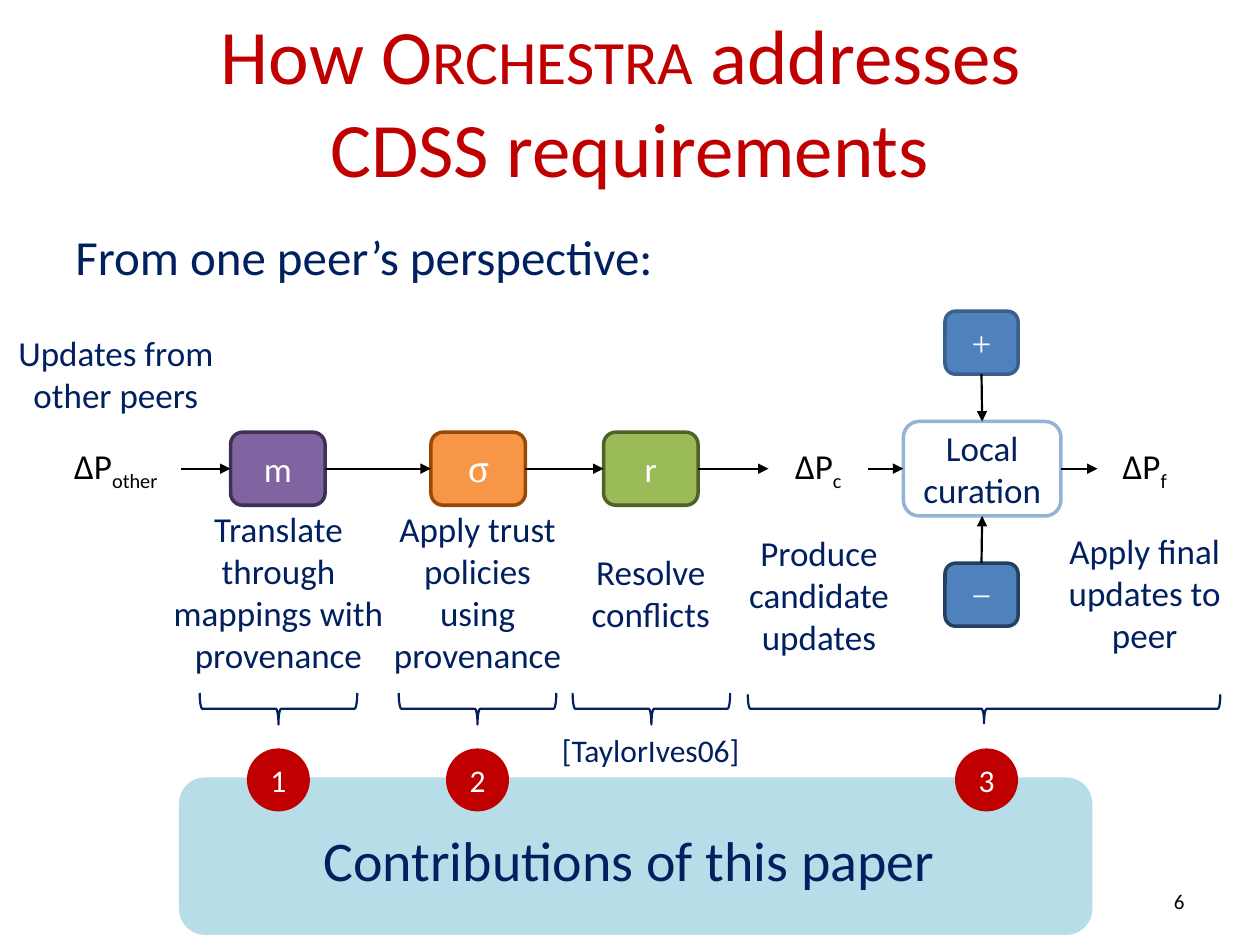
from lxml import etree
from pptx import Presentation
from pptx.dml.color import RGBColor
from pptx.enum.shapes import MSO_CONNECTOR, MSO_SHAPE
from pptx.enum.text import MSO_ANCHOR, PP_ALIGN
from pptx.oxml.ns import qn
from pptx.util import Inches, Pt

ROUNDED, OVAL, BRACE = MSO_SHAPE.ROUNDED_RECTANGLE, MSO_SHAPE.OVAL, MSO_SHAPE.LEFT_BRACE
STRAIGHT = MSO_CONNECTOR.STRAIGHT
TOP, MIDDLE = MSO_ANCHOR.TOP, MSO_ANCHOR.MIDDLE
LEFT, CENTER, RIGHT = PP_ALIGN.LEFT, PP_ALIGN.CENTER, PP_ALIGN.RIGHT
TOP_SIDE, LEFT_SIDE, BOTTOM_SIDE, RIGHT_SIDE = range(4)

BLACK = RGBColor(0x00, 0x00, 0x00)
WHITE = RGBColor(0xFF, 0xFF, 0xFF)
NAVY = RGBColor(0x00, 0x20, 0x60)
RED = RGBColor(0xC0, 0x00, 0x00)
PALE_TEAL = RGBColor(0xB7, 0xDE, 0xE8)
PURPLE, DARK_PURPLE = RGBColor(0x80, 0x64, 0xA2), RGBColor(0x40, 0x31, 0x52)
ORANGE, DARK_ORANGE = RGBColor(0xF7, 0x96, 0x46), RGBColor(0x98, 0x48, 0x07)
GREEN, DARK_GREEN = RGBColor(0x9B, 0xBB, 0x59), RGBColor(0x4F, 0x62, 0x28)
BLUE, MID_BLUE = RGBColor(0x4F, 0x81, 0xBD), RGBColor(0x3A, 0x5F, 0x8C)
DARK_BLUE, LIGHT_BLUE = RGBColor(0x24, 0x40, 0x61), RGBColor(0x95, 0xB3, 0xD7)


def style_paragraph(paragraph, size, color, align=CENTER, font="Calibri"):
    """Set the alignment and font of a whole paragraph."""
    paragraph.alignment = align
    paragraph.font.name = font
    paragraph.font.size = Pt(size)
    paragraph.font.color.rgb = color


def add_text(slide, box, lines, size, color=NAVY, align=CENTER, anchor=TOP):
    """Add a wrapped text box with one paragraph per line."""
    frame = slide.shapes.add_textbox(*map(Inches, box)).text_frame
    frame.word_wrap = True
    frame.vertical_anchor = anchor
    frame.text = lines
    for paragraph in frame.paragraphs:
        style_paragraph(paragraph, size, color, align)
    return frame


def add_figure(slide, kind, box, fill=None, line=None, width=2):
    """Add a flat shape with an optional fill and outline."""
    figure = slide.shapes.add_shape(kind, *map(Inches, box))
    figure.shadow.inherit = False
    if fill is None:
        figure.fill.background()
    else:
        figure.fill.solid()
        figure.fill.fore_color.rgb = fill
    if line is None:
        figure.line.fill.background()
    else:
        figure.line.color.rgb = line
        figure.line.width = Pt(width)
    return figure


def add_node(slide, kind, box, label, fill=None, line=None, color=WHITE,
             size=20, font="Calibri", subscript=""):
    """Add a shape with a centred label and an optional subscript."""
    node = add_figure(slide, kind, box, fill, line)
    node.text_frame.vertical_anchor = MIDDLE
    paragraph = node.text_frame.paragraphs[0]
    paragraph.add_run().text = label
    if subscript:
        run = paragraph.add_run()
        run.text = subscript
        run.font._element.set("baseline", "-25000")
    style_paragraph(paragraph, size, color, font=font)
    return node


def add_arrow(slide, start, start_side, end, end_side):
    """Join two nodes with a black arrow."""
    arrow = slide.shapes.add_connector(STRAIGHT, 0, 0, 0, 0)
    arrow.begin_connect(start, start_side)
    arrow.end_connect(end, end_side)
    arrow.line.color.rgb = BLACK
    arrow.line.width = Pt(1.25)
    etree.SubElement(arrow.line._get_or_add_ln(), qn("a:tailEnd"), type="triangle")
    etree.SubElement(arrow._element.spPr, qn("a:effectLst"))


def add_title(slide, box):
    """Add the two-line title with the system name in small capitals."""
    frame = add_text(slide, box, "", 44, RED, anchor=MIDDLE)
    paragraph = frame.paragraphs[0]
    paragraph.add_run().text = "How "
    system = paragraph.add_run()
    system.text = "Orchestra"
    system.font._element.set("cap", "small")
    paragraph.add_run().text = " addresses "
    paragraph.add_line_break()
    paragraph.add_run().text = "CDSS requirements"
    style_paragraph(paragraph, 44, RED)


def add_pipeline(slide, box):
    """Add the chain of update stages along the middle of the box."""
    left, top, _, height = box
    middle = top + height / 2
    stages = [
        (0, 1.04, 0.58, "∆P", dict(color=BLACK, subscript="other")),
        (1.43, 0.75, 0.58, "m", dict(fill=PURPLE, line=DARK_PURPLE)),
        (3.02, 0.75, 0.58, "σ", dict(fill=ORANGE, line=DARK_ORANGE, font="Cambria")),
        (4.39, 0.75, 0.58, "r", dict(fill=GREEN, line=DARK_GREEN)),
        (5.7, 0.79, 0.58, "∆P", dict(color=BLACK, subscript="c")),
        (6.77, 1.25, 0.75, "Local curation", dict(line=LIGHT_BLUE, color=NAVY)),
        (8.31, 0.75, 0.58, "∆P", dict(color=BLACK, subscript="f")),
    ]
    nodes = [add_node(slide, ROUNDED, (left + x, middle - tall / 2, wide, tall), label, **style)
             for x, wide, tall, label, style in stages]
    for start, end in zip(nodes, nodes[1:]):
        add_arrow(slide, start, RIGHT_SIDE, end, LEFT_SIDE)

    curation = nodes[5]
    curation.text_frame.margin_left = curation.text_frame.margin_right = 0
    edits = [("+", top, MID_BLUE, BOTTOM_SIDE, TOP_SIDE),
             ("−", top + height - 0.5, DARK_BLUE, TOP_SIDE, BOTTOM_SIDE)]
    for sign, y, outline, edit_side, curation_side in edits:
        edit = add_node(slide, ROUNDED, (left + 7.1, y, 0.58, 0.5), sign, BLUE, outline,
                        font="Times New Roman")
        add_arrow(slide, edit, edit_side, curation, curation_side)


def add_captions(slide, box):
    """Add the explanations around the pipeline."""
    left, top, _, _ = box
    captions = [
        (0, 0, 2, 0.77, "Updates from other peers"),
        (1.33, 1.4, 1.92, 1.45, "Translate through mappings with provenance"),
        (2.83, 1.4, 2.08, 1.45, "Apply trust policies\nusing provenance"),
        (4.33, 1.74, 1.83, 0.77, "Resolve conflicts"),
        (5.83, 1.59, 1.5, 1.11, "Produce candidate updates"),
        (8.25, 1.57, 1.83, 1.11, "Apply final updates to peer"),
    ]
    for x, y, wide, tall, caption in captions:
        add_text(slide, (left + x, top + y, wide, tall), caption, 20)


def add_braces(slide, box):
    """Add downward braces that group the stages, with the citation below."""
    left, top, _, _ = box
    for center, span, depth in [(0.63, 1.25, 0.25), (2.21, 1.25, 0.25),
                                (3.59, 1.25, 0.25), (6.23, 3.75, 0.23)]:
        upright = (left + center - depth / 2, top + 0.125 - span / 2, depth, span)
        brace = add_figure(slide, BRACE, upright, line=NAVY, width=1.25)
        brace.rotation = 270
    add_text(slide, (left + 2.67, top + 0.25, 1.83, 0.4), "[TaylorIves06]", 18)


def add_contributions(slide, box):
    """Add the contributions panel with numbered badges on its top edge."""
    left, top, _, _ = box
    add_figure(slide, ROUNDED, box, PALE_TEAL)
    add_text(slide, (left + 0.66, top + 0.33, 5.83, 0.64), "Contributions of this paper", 32)
    for number, x in enumerate((0.54, 2.12, 6.16), 1):
        add_node(slide, OVAL, (left + x, top - 0.23, 0.5, 0.5), str(number), RED, size=18)


def main():
    """Build and save the slide."""
    deck = Presentation()
    deck.slide_width, deck.slide_height = Inches(10), Inches(7.5)
    slide = deck.slides.add_slide(deck.slide_layouts[6])
    add_title(slide, (0.5, 0.17, 9, 1.25))
    add_text(slide, (0.5, 1.75, 9, 0.75), "From one peer’s perspective:", 28, align=LEFT)
    add_pipeline(slide, (0.4, 2.47, 9.06, 2.5))
    add_captions(slide, (-0.08, 2.58, 10.08, 2.85))
    add_braces(slide, (1.58, 5.5, 8.1, 0.65))
    add_contributions(slide, (1.42, 6.17, 7.25, 1.25))
    add_text(slide, (7.17, 6.95, 2.33, 0.4), "6", 12, BLACK, RIGHT, MIDDLE)
    deck.save("out.pptx")


if __name__ == "__main__":
    main()
